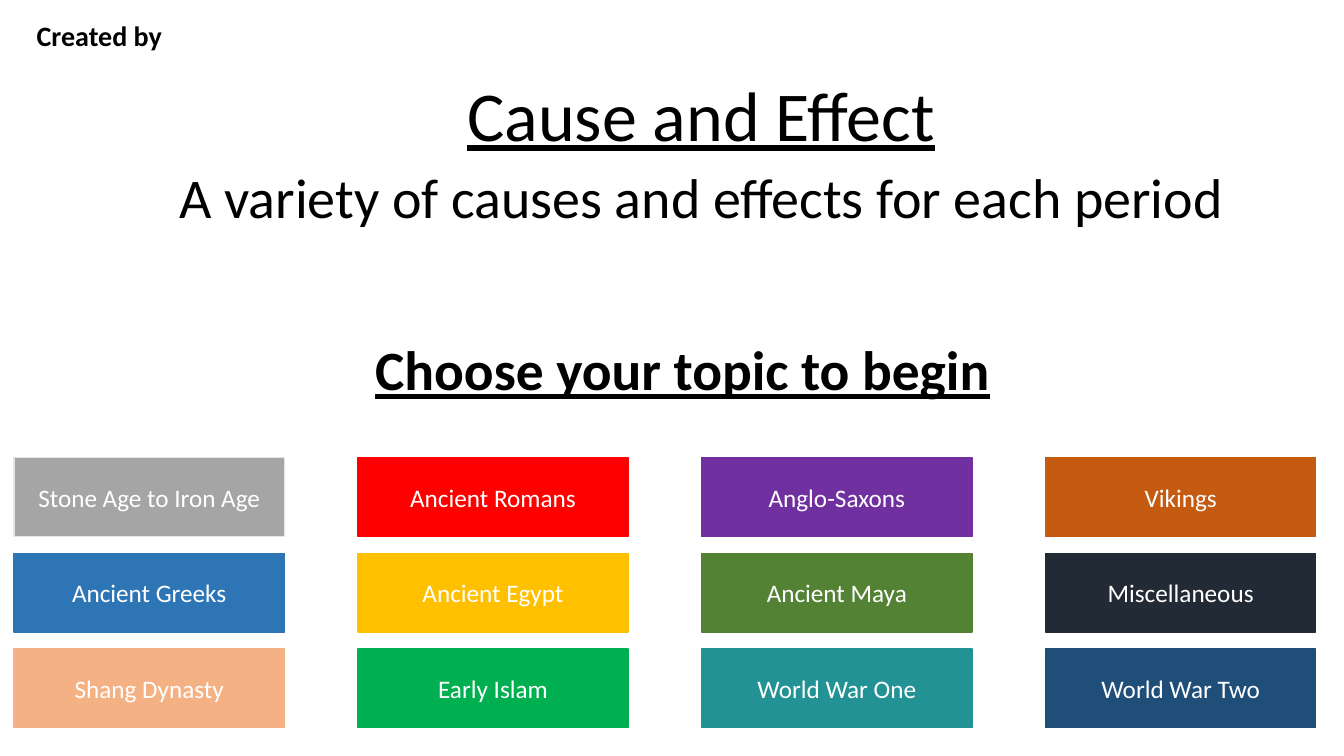
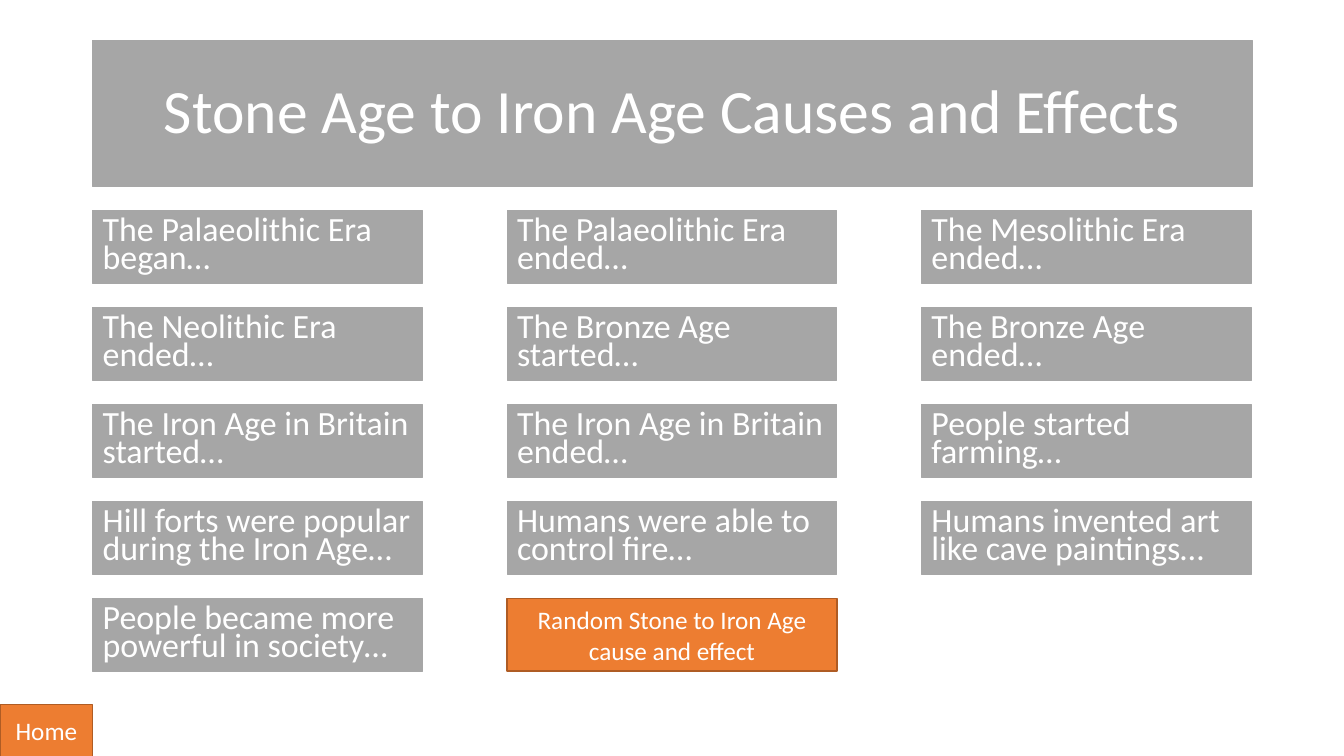
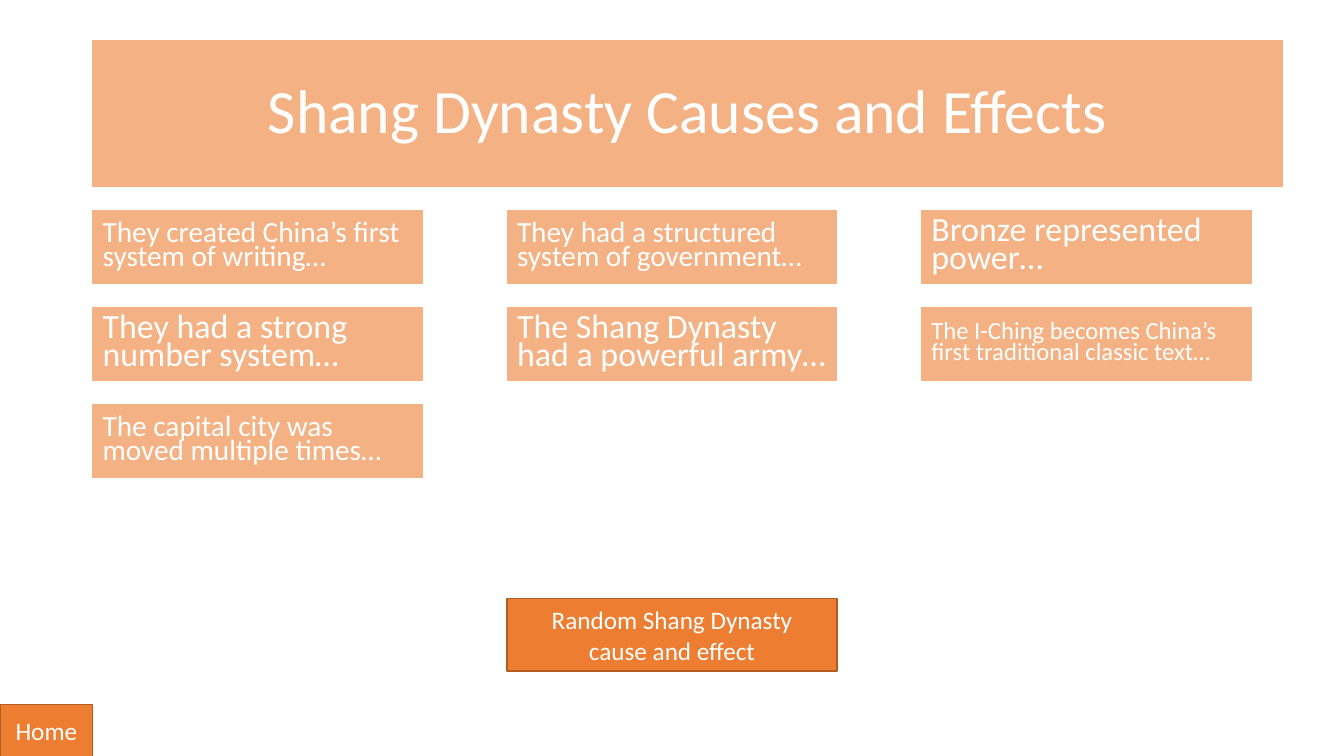
"""Build a cause and effect history menu with two topic slides."""
import pptx
import pptx.dml.color
import pptx.enum.shapes
import pptx.enum.text
import pptx.util

Inches = pptx.util.Inches
Pt = pptx.util.Pt
ALIGN = pptx.enum.text.PP_ALIGN
ANCHOR = pptx.enum.text.MSO_ANCHOR
SHAPE = pptx.enum.shapes.MSO_SHAPE

FONT = "Calibri"
COLOURS = {
    "black": "000000", "white": "FFFFFF", "pale": "E7E6E6",
    "stone": "A5A5A5", "slate": "A6A6A6", "red": "FF0000",
    "purple": "7030A0", "rust": "C55A11", "blue": "2E75B6",
    "gold": "FFC000", "olive": "548235", "ink": "222A35",
    "peach": "F4B183", "green": "00B050", "teal": "239295",
    "navy": "1F4E79", "orange": "ED7D31", "brown": "AF5C24",
}

TOPICS = [
    ("Stone Age to Iron Age", "stone", "pale"),
    ("Ancient Romans", "red", "red"),
    ("Anglo-Saxons", "purple", "purple"),
    ("Vikings", "rust", "rust"),
    ("Ancient Greeks", "blue", "blue"),
    ("Ancient Egypt", "gold", "gold"),
    ("Ancient Maya", "olive", "olive"),
    ("Miscellaneous", "ink", "ink"),
    ("Shang Dynasty", "peach", "peach"),
    ("Early Islam", "green", "green"),
    ("World War One", "teal", "teal"),
    ("World War Two", "navy", "navy"),
]

LARGE, MEDIUM, SMALL = 24.2, 20.9, 17.6
PERIODS = [
    {
        "title": "Stone Age to Iron Age Causes and Effects",
        "colour": "slate",
        "band_width": 11.5,
        "random": "Random Stone to Iron Age cause and effect",
        "statements": [
            ("The Palaeolithic Era began…", LARGE),
            ("The Palaeolithic Era ended…", LARGE),
            ("The Mesolithic Era ended…", LARGE),
            ("The Neolithic Era ended…", LARGE),
            ("The Bronze Age started…", LARGE),
            ("The Bronze Age ended…", LARGE),
            ("The Iron Age in Britain started…", LARGE),
            ("The Iron Age in Britain ended…", LARGE),
            ("People started farming…", LARGE),
            ("Hill forts were popular during the Iron Age…", LARGE),
            ("Humans were able to control fire…", LARGE),
            ("Humans invented art like cave paintings…", LARGE),
            ("People became more powerful in society…", LARGE),
        ],
    },
    {
        "title": "Shang Dynasty Causes and Effects",
        "colour": "peach",
        "band_width": 11.8,
        "random": "Random Shang Dynasty\ncause and effect",
        "statements": [
            ("They created China’s first system of writing…", MEDIUM),
            ("They had a structured system of government…", MEDIUM),
            ("Bronze represented power…", LARGE),
            ("They had a strong number system…", LARGE),
            ("The Shang Dynasty had a powerful army…", LARGE),
            ("The I-Ching becomes China’s first traditional classic text…", SMALL),
            ("The capital city was moved multiple times…", MEDIUM),
        ],
    },
]

TOPIC_GRID = {"left": 0.14, "top": 4.54, "across": 3.41, "down": 0.95,
              "columns": 4, "size": (2.68, 0.78)}
STATEMENT_GRID = {"left": 0.92, "top": 2.09, "across": 4.11, "down": 0.962,
                  "columns": 3, "size": (3.27, 0.72)}
RANDOM_CELL = 13


def rgb(name):
    return pptx.dml.color.RGBColor.from_string(COLOURS[name])


def cell(grid, index):
    row, column = divmod(index, grid["columns"])
    return (grid["left"] + column * grid["across"],
            grid["top"] + row * grid["down"], *grid["size"])


def write(part, text, size, colour="white", align=ALIGN.CENTER,
          anchor=ANCHOR.MIDDLE, spacing=None, before=None,
          bold=False, underline=False):
    frame = part.text_frame
    frame.word_wrap = True
    frame.vertical_anchor = anchor
    frame.text = text
    for paragraph in frame.paragraphs:
        paragraph.alignment = align
        paragraph.line_spacing = spacing
        paragraph.space_before = before
        for run in paragraph.runs:
            run.font.name = FONT
            run.font.size = Pt(size)
            run.font.bold = bold
            run.font.underline = underline
            run.font.color.rgb = rgb(colour)


def add_text(slide, box, text, size, **style):
    part = slide.shapes.add_textbox(*map(Inches, box))
    write(part, text, size, colour="black", spacing=0.9, **style)
    return part


def add_panel(slide, preset, box, fill, line, weight, text, size, **style):
    panel = slide.shapes.add_shape(preset, *map(Inches, box))
    panel.shadow.inherit = False
    panel.fill.solid()
    panel.fill.fore_color.rgb = rgb(fill)
    panel.line.color.rgb = rgb(line)
    panel.line.width = Pt(weight)
    write(panel, text, size, **style)


def add_button(slide, box, text, fill="orange", line="brown"):
    add_panel(slide, SHAPE.ACTION_BUTTON_CUSTOM, box, fill, line, 1, text, 18)


def add_block(slide, box, colour, text, size, **style):
    add_panel(slide, SHAPE.RECTANGLE, box, colour, colour, 0.75, text, size, **style)


def build_menu(slide):
    add_text(slide, (1.02, 3.32, 11.5, 0.76), "Choose your topic to begin", 39.6,
             bold=True, underline=True)
    for index, (topic, fill, line) in enumerate(TOPICS):
        add_button(slide, cell(TOPIC_GRID, index), topic, fill, line)
    heading = add_text(slide, (0.29, 0.75, 13.33, 2.94),
                       "Cause and Effect\nA variety of causes and effects for each period",
                       40, anchor=ANCHOR.TOP, before=Pt(10))
    title_font = heading.text_frame.paragraphs[0].runs[0].font
    title_font.size = Pt(50)
    title_font.underline = True
    add_text(slide, (0, 0.17, 1.97, 0.6), "Created by", 20,
             anchor=ANCHOR.TOP, before=Pt(10), bold=True)


def build_period(slide, period):
    add_block(slide, (0.92, 0.4, period["band_width"], 1.45), period["colour"],
              period["title"], 44, spacing=0.9)
    for index, (statement, size) in enumerate(period["statements"]):
        add_block(slide, cell(STATEMENT_GRID, index), period["colour"],
                  statement, size, align=ALIGN.LEFT, spacing=0.7)
    add_button(slide, cell(STATEMENT_GRID, RANDOM_CELL), period["random"])
    add_button(slide, (0, 6.99, 0.92, 0.52), "Home")


def main():
    deck = pptx.Presentation()
    deck.slide_width = Inches(13.33)
    deck.slide_height = Inches(7.5)
    blank = deck.slide_layouts[6]
    build_menu(deck.slides.add_slide(blank))
    for period in PERIODS:
        build_period(deck.slides.add_slide(blank), period)
    deck.save("out.pptx")


if __name__ == "__main__":
    main()
